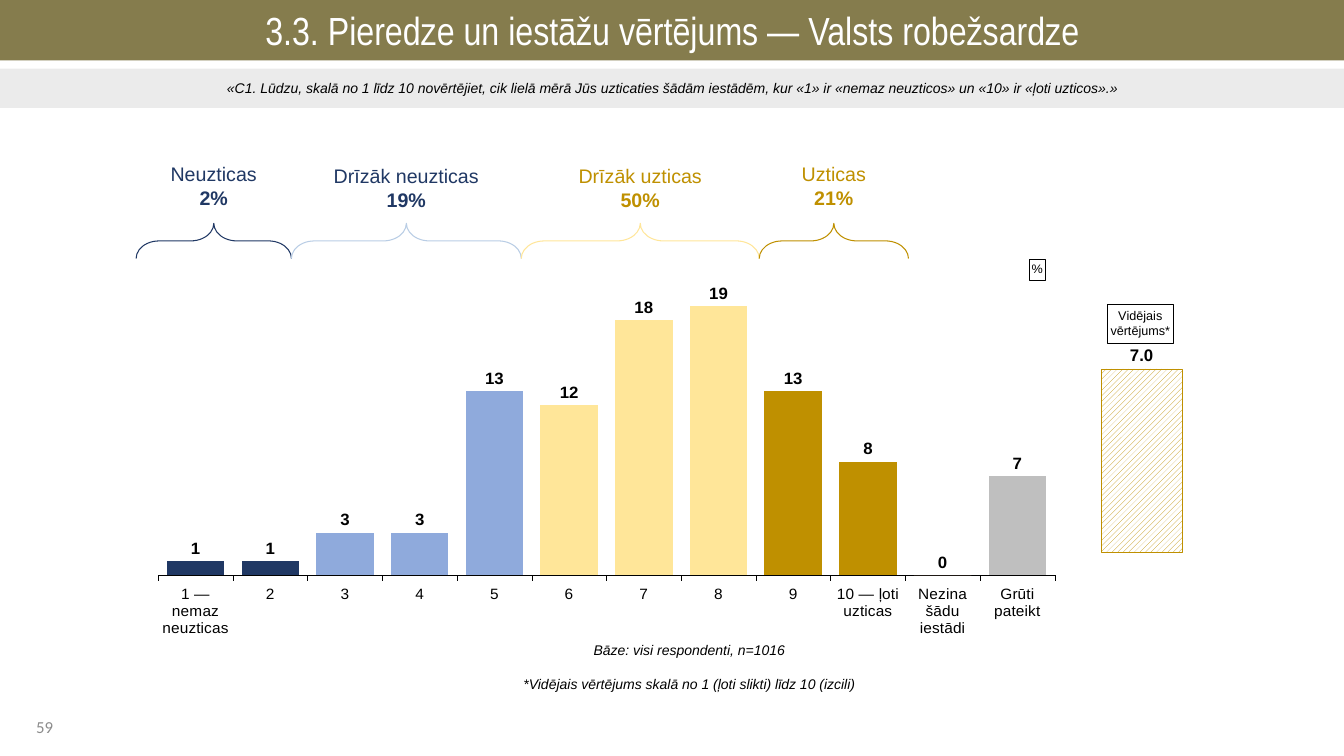
from lxml.etree import SubElement
from pptx import Presentation
from pptx.chart.data import CategoryChartData
from pptx.dml.color import RGBColor
from pptx.enum.chart import XL_CHART_TYPE as ChartType, XL_LABEL_POSITION as LabelPosition
from pptx.enum.chart import XL_TICK_MARK as TickMark
from pptx.enum.dml import MSO_PATTERN as Pattern
from pptx.enum.shapes import MSO_SHAPE as Shape
from pptx.enum.text import MSO_ANCHOR as Anchor, PP_ALIGN as Align
from pptx.oxml import parse_xml
from pptx.oxml.ns import nsdecls, qn
from pptx.util import Inches, Pt

BLACK = RGBColor(0x00, 0x00, 0x00)
WHITE = RGBColor(0xFF, 0xFF, 0xFF)
OLIVE = RGBColor(0x85, 0x7C, 0x4D)
PALE_GREY = RGBColor(0xD9, 0xD9, 0xD9)
PAGE_GREY = RGBColor(0x8C, 0x8C, 0x8C)
NAVY = RGBColor(0x20, 0x38, 0x64)
BLUE = RGBColor(0x8F, 0xAA, 0xDC)
LIGHT_BLUE = RGBColor(0xB9, 0xCD, 0xE5)
CREAM = RGBColor(0xFF, 0xE6, 0x99)
GOLD = RGBColor(0xBF, 0x90, 0x00)
PEACH = RGBColor(0xF8, 0xCB, 0xAD)
GREY = RGBColor(0xBF, 0xBF, 0xBF)


class SurveySlide:
    """Holds the text style and the slide, and adds each kind of element."""

    def __init__(self, slide, font="Arial"):
        self.slide = slide
        self.font = font

    def style(self, font, size, color=BLACK, bold=False, italic=False, name=None):
        font.name = name or self.font
        font.size = Pt(size)
        font.bold = bold
        font.italic = italic
        font.color.rgb = color

    def add_lines(self, frame, lines, size, color=BLACK, gap=0, align=Align.CENTER, **look):
        frame.word_wrap = True
        for index, (line, bold) in enumerate(lines):
            paragraph = frame.paragraphs[0] if index == 0 else frame.add_paragraph()
            paragraph.alignment = align
            if index:
                paragraph.space_before = Pt(gap)
            run = paragraph.add_run()
            run.text = line
            self.style(run.font, size, color, bold, **look)

    def text(self, box, lines, size, anchor=Anchor.TOP, bottom=0.05, **look):
        frame = self.slide.shapes.add_textbox(*map(Inches, box)).text_frame
        frame.vertical_anchor = anchor
        frame.margin_bottom = Inches(bottom)
        self.add_lines(frame, lines, size, **look)

    def band(self, top, height, fill, line, size, alpha=None, **look):
        band = self.slide.shapes.add_shape(
            Shape.RECTANGLE, 0, Inches(top), Inches(13.33), Inches(height))
        band.shadow.inherit = False
        band.fill.solid()
        band.fill.fore_color.rgb = fill
        if alpha:
            tint = band._element.spPr.find(".//" + qn("a:srgbClr"))
            SubElement(tint, qn("a:alpha"), val=str(alpha * 1000))
        band.line.fill.background()
        band.text_frame.vertical_anchor = Anchor.MIDDLE
        self.add_lines(band.text_frame, [(line, False)], size, **look)

    def brace(self, left, span, middle, color):
        depth = 0.35
        brace = self.slide.shapes.add_shape(
            Shape.LEFT_BRACE, Inches(left + (span - depth) / 2), Inches(middle - span / 2),
            Inches(depth), Inches(span))
        brace.rotation = 90
        brace.adjustments[0] = 0.65
        brace.adjustments[1] = 0.5
        brace.shadow.inherit = False
        brace.fill.background()
        brace.line.color.rgb = color
        brace.line.width = Pt(0.75)

    def place(self, parent, index, **values):
        for old in parent.findall(qn("c:layout")):
            parent.remove(old)
        layout = parse_xml(f"<c:layout {nsdecls('c')}><c:manualLayout/></c:layout>")
        for tag, value in values.items():
            SubElement(layout[0], qn("c:" + tag), val=str(value))
        parent.insert(index, layout)

    def columns(self, box, categories, values, top, number_format, title, title_at, plot_at):
        data = CategoryChartData(number_format)
        data.categories = categories
        data.add_series("Vērtējums", values)
        chart = self.slide.shapes.add_chart(
            ChartType.COLUMN_CLUSTERED, *map(Inches, box), data).chart
        self.style(chart.font, 9)
        chart.has_legend = False
        self.add_lines(chart.chart_title.text_frame, [(line, False) for line in title], 9)
        border = chart.chart_title.format.line
        border.color.rgb = BLACK
        border.width = Pt(0.25)
        self.place(chart.chart_title._element, 1, xMode="edge", yMode="edge",
                   x=title_at[0], y=title_at[1])

        scale = chart.value_axis
        scale.minimum_scale, scale.maximum_scale, scale.major_unit = 0, top, 20
        scale.has_major_gridlines = False
        scale.visible = False

        plot = chart.plots[0]
        plot.gap_width = 30
        plot.vary_by_categories = False
        plot.has_data_labels = True
        labels = plot.data_labels
        labels.show_value = True
        labels.position = LabelPosition.OUTSIDE_END
        labels.number_format = number_format
        labels.number_format_is_linked = False
        self.style(labels.font, 12, bold=True)
        self.place(plot._element.getparent(), 0, layoutTarget="inner", xMode="edge",
                   yMode="edge", **dict(zip("xywh", plot_at)))
        return chart


def main():
    deck = Presentation()
    deck.slide_width, deck.slide_height = Inches(13.33), Inches(7.5)
    page = SurveySlide(deck.slides.add_slide(deck.slide_layouts[6]))

    page.text((0.26, 7.03, 1.42, 0.36), [("59", False)], 12, Anchor.MIDDLE,
              color=PAGE_GREY, name="Calibri", align=Align.LEFT)
    page.band(0, 0.6, OLIVE, "3.3. Pieredze un iestāžu vērtējums — Valsts robežsardze", 28,
              color=WHITE, name="Arial Narrow")
    page.band(0.68, 0.39, PALE_GREY,
              "«C1. Lūdzu, skalā no 1 līdz 10 novērtējiet, cik lielā mērā Jūs uzticaties "
              "šādām iestādēm, kur «1» ir «nemaz neuzticos» un «10» ir «ļoti uzticos».»",
              10, alpha=50, italic=True)

    answers = [
        ("1 — nemaz neuzticas", 1, NAVY), ("2", 1, NAVY), ("3", 3, BLUE), ("4", 3, BLUE),
        ("5", 13, BLUE), ("6", 12, CREAM), ("7", 18, CREAM), ("8", 19, CREAM),
        ("9", 13, GOLD), ("10 — ļoti uzticas", 8, GOLD),
        ("Nezina šādu iestādi", 0, PEACH), ("Grūti pateikt", 7, GREY),
    ]
    names, shares, colors = zip(*answers)
    trust = page.columns((1.29, 2.19, 9.33, 4.13), names, shares, 25, "0", ["%"],
                         (0.956, 0.094), (0.03, 0.001, 0.953, 0.873))
    scale = trust.category_axis
    scale.major_tick_mark = TickMark.OUTSIDE
    scale.format.line.color.rgb = BLACK
    scale.format.line.width = Pt(0.25)
    page.style(scale.tick_labels.font, 11)
    for index, color in enumerate(colors):
        fill = trust.series[0].points[index].format.fill
        fill.solid()
        fill.fore_color.rgb = color

    left, label_width = 1.35, 1.65
    for name, share, span, top, color, brace_color in (
        ("Neuzticas", "2%", 1.54, 1.56, NAVY, NAVY),
        ("Drīzāk neuzticas", "19%", 2.28, 1.58, NAVY, LIGHT_BLUE),
        ("Drīzāk uzticas", "50%", 2.36, 1.58, GOLD, CREAM),
        ("Uzticas", "21%", 1.48, 1.56, GOLD, GOLD),
    ):
        page.brace(left, span, 2.39, brace_color)
        page.text((left + (span - label_width) / 2, top, label_width, 0.57),
                  [(name, False), (share, True)], 14, color=color)
        left += span

    page.text((4.54, 6.46, 4.59, 0.47),
              [("Bāze: visi respondenti, n=1016", False),
               ("*Vidējais vērtējums skalā no 1 (ļoti slikti) līdz 10 (izcili)", False)],
              10, Anchor.MIDDLE, bottom=0.21, gap=12, italic=True)

    average = page.columns((10.5, 2.88, 1.64, 2.97), ["1"], [7.0], 10, "0.0",
                           ["Vidējais", "vērtējums*"], (0.295, 0.046),
                           (0.183, 0.001, 0.638, 0.873))
    average.category_axis.visible = False
    bar = average.series[0].format
    bar.fill.patterned()
    bar.fill.pattern = Pattern.WIDE_UPWARD_DIAGONAL
    bar.fill.fore_color.rgb = GOLD
    bar.fill.back_color.rgb = WHITE
    bar.line.color.rgb = GOLD
    bar.line.width = Pt(0.25)

    deck.save("out.pptx")


if __name__ == "__main__":
    main()
